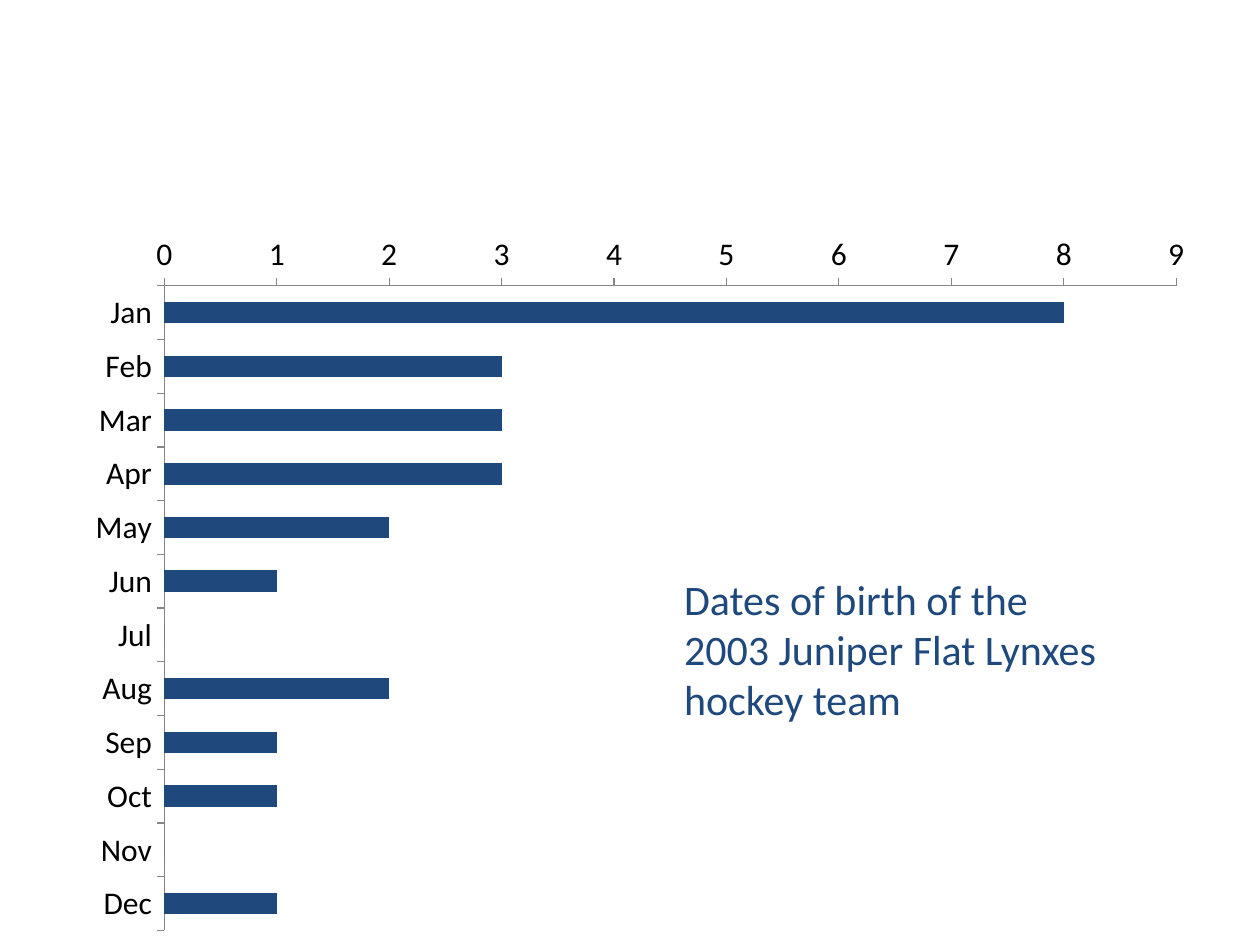
from dataclasses import dataclass

from pptx import Presentation
from pptx.chart.data import CategoryChartData
from pptx.dml.color import RGBColor
from pptx.enum.chart import XL_CHART_TYPE, XL_TICK_MARK
from pptx.util import Cm, Pt

NAVY = RGBColor(0x1F, 0x49, 0x7D)
BLACK = RGBColor(0x00, 0x00, 0x00)
AXIS_GREY = RGBColor(0x86, 0x86, 0x86)
FONT = "Calibri"
BAR_CLUSTERED = XL_CHART_TYPE.BAR_CLUSTERED
TICK_OUTSIDE, TICK_NONE = XL_TICK_MARK.OUTSIDE, XL_TICK_MARK.NONE
BLANK_LAYOUT = 6


@dataclass(frozen=True)
class Area:
    left: float
    top: float
    width: float
    height: float

    def lengths(self) -> tuple[Cm, Cm, Cm, Cm]:
        return Cm(self.left), Cm(self.top), Cm(self.width), Cm(self.height)


@dataclass(frozen=True)
class MonthCount:
    month: str
    births: int


CHART_AREA = Area(1.47, 4.45, 22.86, 14.6)
CAPTION_AREA = Area(13.54, 11.43, 9.1, 3.33)
CAPTION = "Dates of birth of the 2003 Juniper Flat Lynxes hockey team"
BIRTHS = [
    MonthCount("Jan", 8), MonthCount("Feb", 3), MonthCount("Mar", 3),
    MonthCount("Apr", 3), MonthCount("May", 2), MonthCount("Jun", 1),
    MonthCount("Jul", 0), MonthCount("Aug", 2), MonthCount("Sep", 1),
    MonthCount("Oct", 1), MonthCount("Nov", 0), MonthCount("Dec", 1),
]


def style_font(font, size: float, color: RGBColor) -> None:
    font.name = FONT
    font.size = Pt(size)
    font.color.rgb = color


def style_axis(axis) -> None:
    axis.has_major_gridlines = False
    axis.major_tick_mark = TICK_OUTSIDE
    axis.minor_tick_mark = TICK_NONE
    axis.format.line.color.rgb = AXIS_GREY
    axis.format.line.width = Pt(0.75)
    style_font(axis.tick_labels.font, 18, BLACK)


def add_birth_chart(page, area: Area, counts: list[MonthCount]) -> None:
    data = CategoryChartData()
    data.categories = [count.month for count in counts]
    data.add_series("Series 1", [count.births for count in counts])
    chart = page.shapes.add_chart(BAR_CLUSTERED, *area.lengths(), data).chart
    chart.has_legend = False
    chart.has_title = False
    style_font(chart.font, 10, BLACK)

    # Months run downwards, which puts the value axis on top
    for axis in (chart.category_axis, chart.value_axis):
        style_axis(axis)
    chart.category_axis.reverse_order = True
    chart.value_axis.minimum_scale = 0
    chart.value_axis.maximum_scale = 9
    chart.value_axis.major_unit = 1

    # Bars
    plot = chart.plots[0]
    plot.gap_width = 150
    plot.vary_by_categories = False
    fill = plot.series[0].format.fill
    fill.solid()
    fill.fore_color.rgb = NAVY


def add_caption(page, area: Area, text: str) -> None:
    box = page.shapes.add_textbox(*area.lengths())
    box.text_frame.word_wrap = True
    span = box.text_frame.paragraphs[0].add_run()
    span.text = text
    style_font(span.font, 24, NAVY)


def main() -> None:
    deck = Presentation()
    deck.slide_width, deck.slide_height = Cm(25.4), Cm(19.05)
    page = deck.slides.add_slide(deck.slide_layouts[BLANK_LAYOUT])
    add_birth_chart(page, CHART_AREA, BIRTHS)
    add_caption(page, CAPTION_AREA, CAPTION)
    deck.save("out.pptx")


if __name__ == "__main__":
    main()
